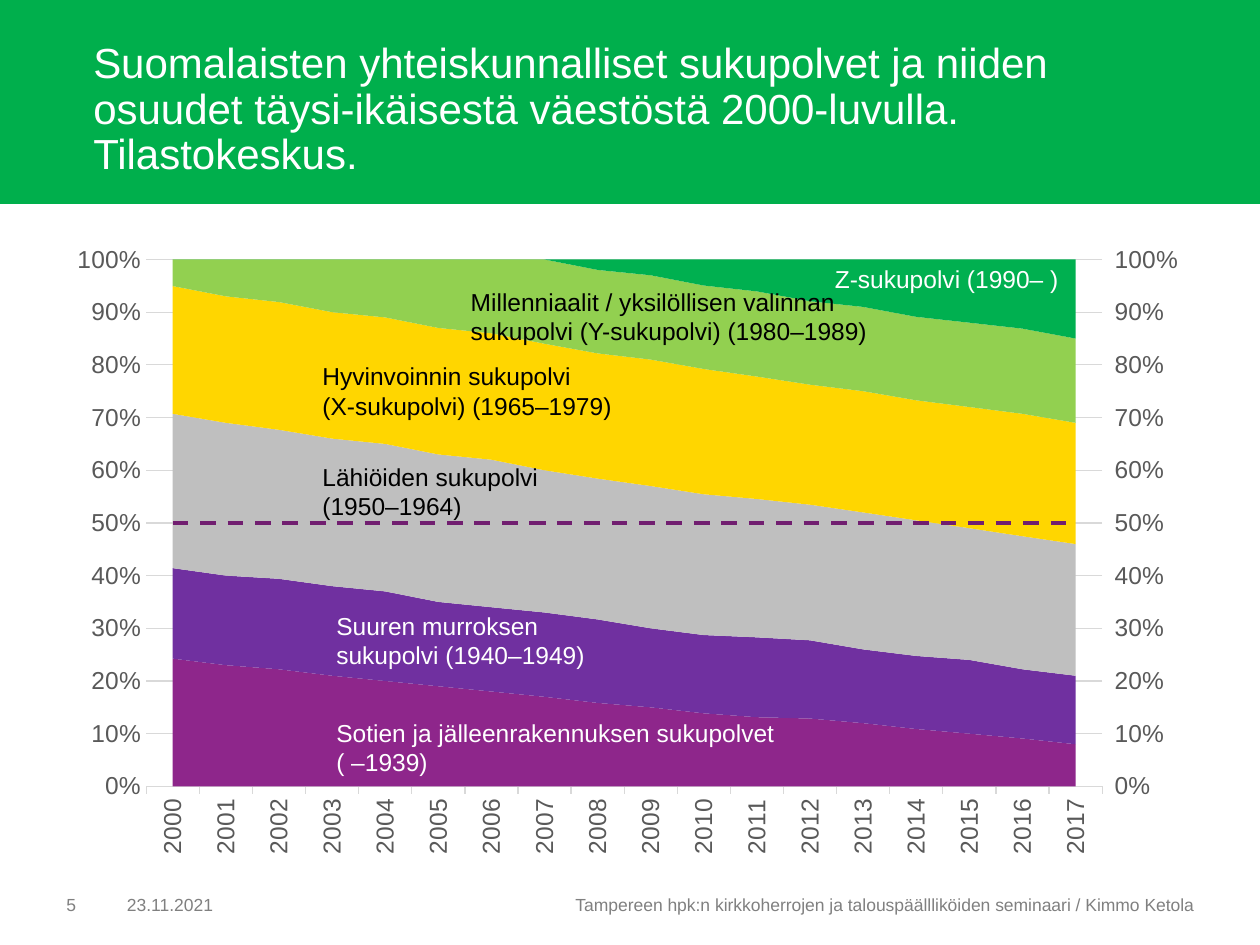
from copy import deepcopy
from dataclasses import dataclass

from lxml import etree
from pptx import Presentation
from pptx import util as u
from pptx.chart.data import CategoryChartData
from pptx.dml.color import RGBColor
from pptx.enum import chart as ch, dml, shapes, text
from pptx.oxml.ns import qn


@dataclass(frozen=True)
class Theme:
    font: str = "Arial"
    green: str = "00AF4C"
    white: str = "FFFFFF"
    black: str = "000000"
    footer: str = "808080"
    axis: str = "595959"
    grid: str = "D9D9D9"
    halfway: str = "711E70"
    title_size: int = 24
    label_size: int = 14
    footer_size: int = 10


THEME = Theme()
YEARS = [str(year) for year in range(2000, 2018)]

# Name, area colour, share of the adult population in each year
GENERATIONS = [
    ("Sotien ja jälleenrakennuksen sukupolvet", "8E268B",
     [24, 23, 22, 21, 20, 19, 18, 17, 16, 15, 14, 13, 13, 12, 11, 10, 9, 8]),
    ("Suuren murroksen sukupolvi", "7030A0",
     [17] * 5 + [16] * 4 + [15] * 4 + [14] * 3 + [13] * 2),
    ("Lähiöiden sukupolvi", "BFBFBF",
     [29] * 2 + [28] * 5 + [27] * 4 + [26] * 4 + [25] * 3),
    ("Hyvinvoinnin sukupolvi", "FFD600", [24] * 11 + [23] * 7),
    ("Millenniaalit", "92D050", [5, 7, 8, 10, 11, 13, 14] + [16] * 11),
    ("Z-sukupolvi", "00B050",
     [0] * 8 + [2, 3, 5, 6, 8, 9, 11, 12, 13, 15]),
]

# Left, top and width in cm within the chart box, colour, lines
AREA_LABELS = [
    (15.49, 0.48, 6.15, THEME.white, "Z-sukupolvi (1990– )"),
    (8.15, 0.94, 10.41, THEME.black,
     "Millenniaalit / yksilöllisen valinnan\nsukupolvi (Y-sukupolvi) (1980–1989)"),
    (5.16, 2.44, 7.14, THEME.black,
     "Hyvinvoinnin sukupolvi\n(X-sukupolvi) (1965–1979)"),
    (5.16, 4.47, 6.15, THEME.black, "Lähiöiden sukupolvi\n(1950–1964)"),
    (5.44, 7.47, 6.15, THEME.white, "Suuren murroksen sukupolvi (1940–1949)"),
    (5.44, 9.63, 10.41, THEME.white,
     "Sotien ja jälleenrakennuksen sukupolvet\n( –1939)"),
]


def rgb(value):
    return RGBColor.from_string(value)


def style_font(font, size, color):
    font.name, font.size = THEME.font, u.Pt(size)
    font.color.rgb = rgb(color)


def style_frame(frame, size, color, align=text.PP_ALIGN.LEFT):
    for para in frame.paragraphs:
        para.alignment = align
        for span in para.runs:
            style_font(span.font, size, color)


def add_text(page, box, words, size, color, align=text.PP_ALIGN.LEFT,
             anchor=text.MSO_ANCHOR.TOP):
    frame = page.shapes.add_textbox(*map(u.Cm, box)).text_frame
    frame.word_wrap = True
    frame.vertical_anchor = anchor
    frame.text = words
    style_frame(frame, size, color, align)


def add_header(page, box):
    left, top, width, height = box
    band = page.shapes.add_shape(shapes.MSO_SHAPE.RECTANGLE, *map(u.Cm, box))
    band.shadow.inherit = False
    band.fill.solid()
    band.fill.fore_color.rgb = rgb(THEME.green)
    band.line.fill.background()
    # The band lies behind the title
    page.shapes.title._element.addprevious(band._element)

    title = page.shapes.title
    title.left, title.top = u.Cm(left + 1.09), u.Cm(top + 0.91)
    title.width, title.height = u.Cm(width - 2.18), u.Cm(height - 1.32)
    frame = title.text_frame
    frame.text = ("Suomalaisten yhteiskunnalliset sukupolvet ja niiden osuudet "
                  "täysi-ikäisestä väestöstä 2000-luvulla. Tilastokeskus.")
    frame.word_wrap = True
    frame.auto_size = text.MSO_AUTO_SIZE.NONE
    frame.vertical_anchor = text.MSO_ANCHOR.BOTTOM
    frame.margin_left = frame.margin_right = u.Cm(0.79)
    frame.margin_top = frame.margin_bottom = u.Cm(0.1)
    frame.paragraphs[0].line_spacing = 0.9
    style_frame(frame, THEME.title_size, THEME.white)


def style_axes(chart):
    years, shares = chart.category_axis, chart.value_axis
    for axis in (years, shares):
        style_font(axis.tick_labels.font, THEME.label_size, THEME.axis)
    years.major_tick_mark = ch.XL_TICK_MARK.OUTSIDE
    years.format.line.color.rgb = rgb(THEME.grid)
    years.format.line.width = u.Pt(0.75)
    years._element.find(qn("c:txPr")).find(qn("a:bodyPr")).set("rot", "-5400000")

    shares.minimum_scale, shares.maximum_scale, shares.major_unit = 0, 1, 0.1
    shares.major_tick_mark = ch.XL_TICK_MARK.NONE
    shares.format.line.fill.background()
    shares.tick_labels.number_format = "0%"
    shares.tick_labels.number_format_is_linked = False
    shares.has_major_gridlines = True
    shares.major_gridlines.format.line.color.rgb = rgb(THEME.grid)
    shares.major_gridlines.format.line.width = u.Pt(0.75)
    # Areas start half a step in from the axis
    shares._element.find(qn("c:crossBetween")).set("val", "between")


def move_last_to_right_axis(chart):
    """Turn the last area series into a line on a second pair of axes."""
    areas = chart.plots[0]._element
    series = areas.findall(qn("c:ser"))[-1]
    for extra in series.findall(qn("c:invertIfNegative")):
        series.remove(extra)
    lines = etree.SubElement(areas.getparent(), qn("c:lineChart"))
    areas.addnext(lines)
    etree.SubElement(lines, qn("c:grouping"), val="standard")
    etree.SubElement(lines, qn("c:varyColors"), val="0")
    lines.append(series)
    etree.SubElement(lines, qn("c:marker"), val="1")

    left = chart.value_axis._element
    right, hidden = deepcopy(left), deepcopy(chart.category_axis._element)
    left.addnext(right)
    right.addnext(hidden)
    for axis, number, partner in ((hidden, "5001", "5002"), (right, "5002", "5001")):
        axis.find(qn("c:axId")).set("val", number)
        axis.find(qn("c:crossAx")).set("val", partner)
        etree.SubElement(lines, qn("c:axId"), val=number)
    hidden.find(qn("c:delete")).set("val", "1")
    right.remove(right.find(qn("c:majorGridlines")))
    for tag, value in (("axPos", "r"), ("crosses", "max"), ("majorTickMark", "out")):
        right.find(qn("c:" + tag)).set("val", value)


def set_plot_box(chart, **fractions):
    area = chart.plots[0]._element.getparent()
    for old in area.findall(qn("c:layout")):
        area.remove(old)
    layout = etree.Element(qn("c:layout"))
    area.insert(0, layout)
    manual = etree.SubElement(layout, qn("c:manualLayout"))
    settings = {"layoutTarget": "inner", "xMode": "edge", "yMode": "edge", **fractions}
    for tag, value in settings.items():
        etree.SubElement(manual, qn("c:" + tag), val=str(value))


def add_generations(page, box):
    data = CategoryChartData()
    data.categories = YEARS
    for name, _, shares in GENERATIONS:
        data.add_series(name, shares)
    data.add_series("50 %", [0.5] * len(YEARS))
    chart = page.shapes.add_chart(ch.XL_CHART_TYPE.AREA_STACKED_100,
                                  *map(u.Cm, box), data).chart
    chart.has_legend = chart.has_title = False
    style_font(chart.font, THEME.footer_size, THEME.black)
    style_axes(chart)
    move_last_to_right_axis(chart)
    set_plot_box(chart, x=0.08, y=0.04, w=0.83, h=0.83)

    areas, lines = chart.plots
    areas.vary_by_categories = False
    for series, (_, color, _) in zip(areas.series, GENERATIONS):
        series.format.fill.solid()
        series.format.fill.fore_color.rgb = rgb(color)
    halfway = lines.series[0]
    halfway.smooth = False
    halfway.marker.style = ch.XL_MARKER_STYLE.NONE
    halfway.format.line.color.rgb = rgb(THEME.halfway)
    halfway.format.line.width = u.Pt(2.25)
    halfway.format.line.dash_style = dml.MSO_LINE.DASH

    # Names on the areas
    for left, top, width, color, words in AREA_LABELS:
        height = 1.45 if len(words) > 20 else 0.86
        add_text(page, (box[0] + left, box[1] + top, width, height),
                 words, THEME.label_size, color)


def add_footer(page, box):
    left, top, width, height = box
    parts = [
        (0, 1.2, "5", text.PP_ALIGN.LEFT),
        (1.22, 5.2, "23.11.2021", text.PP_ALIGN.LEFT),
        (6.4, width - 6.4, "Tampereen hpk:n kirkkoherrojen ja talouspäällliköiden "
         "seminaari / Kimmo Ketola", text.PP_ALIGN.RIGHT),
    ]
    for offset, part_width, words, align in parts:
        add_text(page, (left + offset, top, part_width, height), words,
                 THEME.footer_size, THEME.footer, align, text.MSO_ANCHOR.MIDDLE)


def main():
    deck = Presentation()
    deck.slide_width, deck.slide_height = u.Cm(25.4), u.Cm(19.05)
    page = deck.slides.add_slide(deck.slide_layouts[5])
    add_header(page, (0, 0, 25.4, 4.11))
    add_generations(page, (1.09, 4.72, 23.22, 12.8))
    add_footer(page, (1.09, 17.93, 23.22, 0.61))
    deck.save("out.pptx")


if __name__ == "__main__":
    main()
